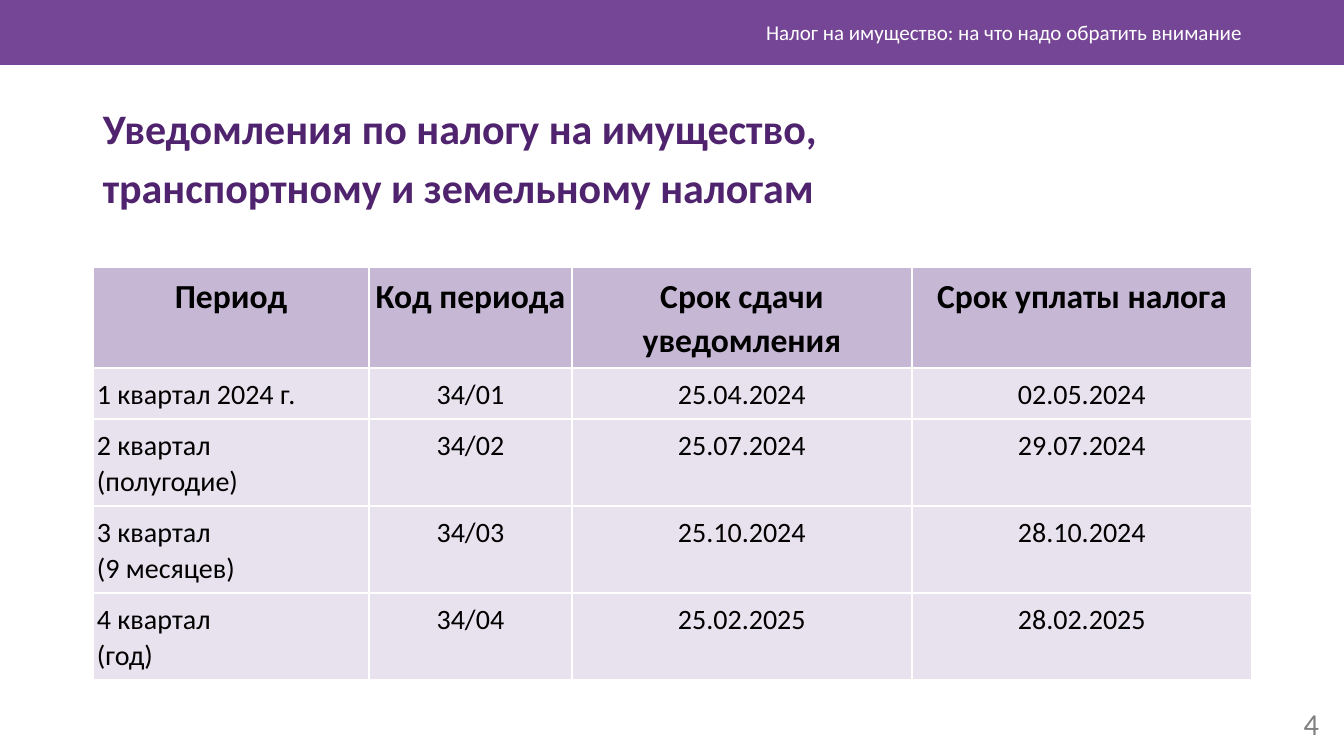
import pptx
import pptx.dml.color
import pptx.enum.shapes
import pptx.enum.text
import pptx.oxml
import pptx.oxml.ns
import pptx.util

EMU_PER_PX = 914400 / 100.8
FONT = "Calibri"
ALIGN = pptx.enum.text.PP_ALIGN
ANCHOR = pptx.enum.text.MSO_ANCHOR

COLUMN_WIDTHS = [276, 203, 340, 340]
ROW_HEIGHTS = [101, 51, 87, 87, 87]
ROWS = [
    ["Период", "Код периода", "Срок сдачи уведомления", "Срок уплаты налога"],
    ["1 квартал 2024 г.", "34/01", "25.04.2024", "02.05.2024"],
    ["2 квартал\n(полугодие)", "34/02", "25.07.2024", "29.07.2024"],
    ["3 квартал\n(9 месяцев)", "34/03", "25.10.2024", "28.10.2024"],
    ["4 квартал\n(год)", "34/04", "25.02.2025", "28.02.2025"],
]


def px(value):
    return pptx.util.Emu(round(value * EMU_PER_PX))


def color(value):
    return pptx.dml.color.RGBColor.from_string(value)


def write_text(frame, text, size, text_color, bold=False, align=ALIGN.LEFT,
               line_spacing=1.0, gap=0):
    frame.text = text
    frame.word_wrap = True
    for index, paragraph in enumerate(frame.paragraphs):
        paragraph.alignment = align
        paragraph.line_spacing = line_spacing
        paragraph.space_before = pptx.util.Pt(gap if index else 0)
        paragraph.font.name = FONT
        paragraph.font.size = pptx.util.Pt(size)
        paragraph.font.bold = bold
        paragraph.font.color.rgb = color(text_color)


def add_text(slide, left, top, width, height, text, size, text_color,
             anchor=ANCHOR.MIDDLE, **style):
    shape = slide.shapes.add_textbox(px(left), px(top), px(width), px(height))
    shape.text_frame.vertical_anchor = anchor
    write_text(shape.text_frame, text, size, text_color, **style)


def add_band(slide, width, height, fill):
    shape = slide.shapes.add_shape(
        pptx.enum.shapes.MSO_SHAPE.RECTANGLE, 0, 0, px(width), px(height))
    shape.shadow.inherit = False
    shape.fill.solid()
    shape.fill.fore_color.rgb = color(fill)
    shape.line.fill.background()


def set_borders(cell, line_color):
    properties = cell._tc.get_or_add_tcPr()
    for index, side in enumerate(["lnL", "lnR", "lnT", "lnB"]):
        properties.insert(index, pptx.oxml.parse_xml(
            f'<a:{side} {pptx.oxml.ns.nsdecls("a")} w="12700"><a:solidFill>'
            f'<a:srgbClr val="{line_color}"/></a:solidFill></a:{side}>'))


def fill_cell(cell, text, is_header, align):
    cell.margin_left = cell.margin_right = px(4)
    cell.margin_top = cell.margin_bottom = px(7)
    cell.fill.solid()
    cell.fill.fore_color.rgb = color("C6B7D5" if is_header else "E8E2EE")
    set_borders(cell, "FFFFFF")
    write_text(cell.text_frame, text, 24 if is_header else 20, "000000",
               bold=is_header, align=align, line_spacing=1.07)


def add_deadline_table(slide, left, top):
    table = slide.shapes.add_table(
        len(ROWS), len(COLUMN_WIDTHS), px(left), px(top),
        px(sum(COLUMN_WIDTHS)), px(sum(ROW_HEIGHTS))).table
    for column, width in zip(table.columns, COLUMN_WIDTHS):
        column.width = px(width)
    for row, height in zip(table.rows, ROW_HEIGHTS):
        row.height = px(height)
    for row_index, texts in enumerate(ROWS):
        for column_index, text in enumerate(texts):
            is_header = row_index == 0
            align = ALIGN.CENTER if is_header or column_index else ALIGN.LEFT
            fill_cell(table.cell(row_index, column_index), text, is_header, align)


def main():
    presentation = pptx.Presentation()
    presentation.slide_width = px(1344)
    presentation.slide_height = px(756)
    slide = presentation.slides.add_slide(presentation.slide_layouts[6])
    add_band(slide, 1344, 65, "764696")
    add_text(slide, 1261, 703, 68, 40, "4", 21.7, "808080", align=ALIGN.RIGHT)
    add_text(slide, 357, 12, 895, 40,
             "Налог на имущество: на что надо обратить внимание",
             15, "FFFFFF", align=ALIGN.RIGHT)
    add_text(slide, 93, 103, 1159, 130,
             "Уведомления по налогу на имущество,\nтранспортному и земельному налогам",
             30, "50236E", anchor=ANCHOR.TOP, bold=True, line_spacing=0.9, gap=10)
    add_deadline_table(slide, 93, 267)
    presentation.save("out.pptx")


if __name__ == "__main__":
    main()
